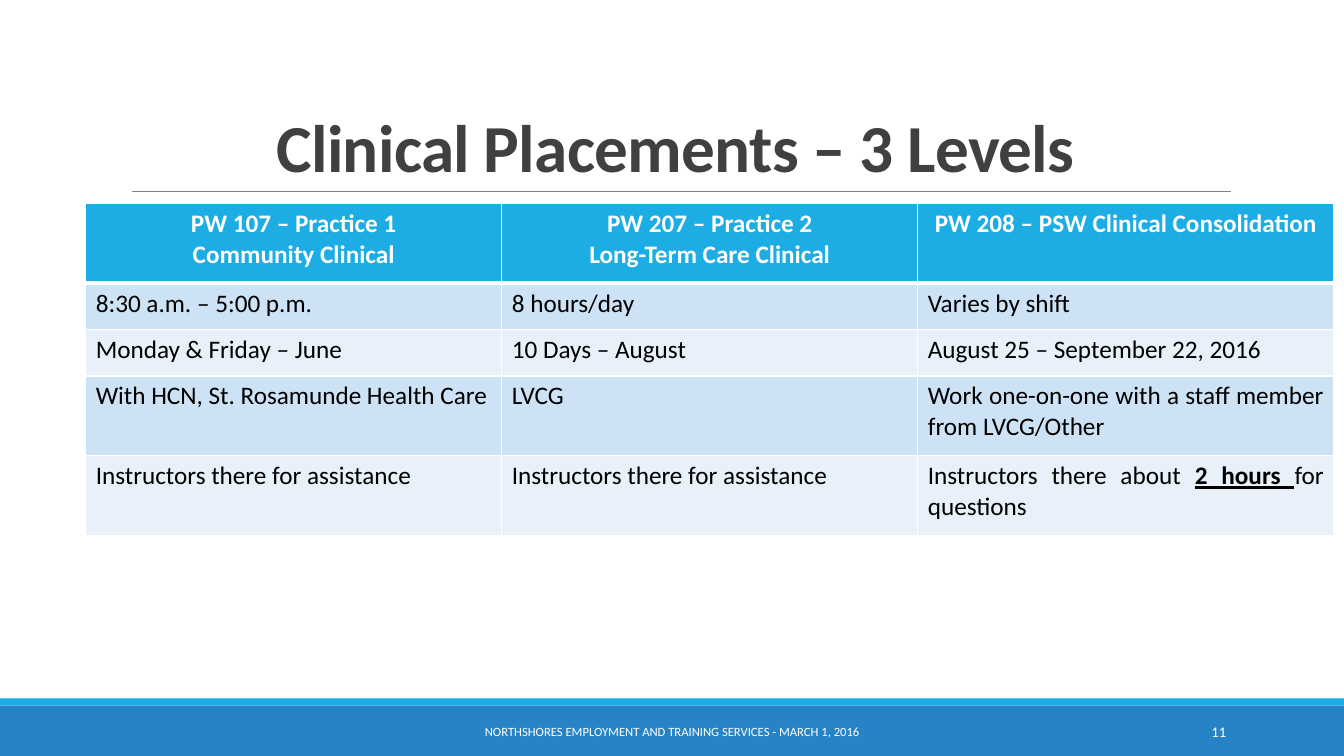
from lxml import etree
from pptx import Presentation
from pptx.dml.color import RGBColor
from pptx.enum.shapes import MSO_CONNECTOR, MSO_SHAPE
from pptx.enum.text import MSO_ANCHOR, PP_ALIGN
from pptx.oxml.ns import qn
from pptx.util import Inches, Pt

WHITE = RGBColor(0xFF, 0xFF, 0xFF)
BLACK = RGBColor(0, 0, 0)
DARK_GREY = RGBColor(0x40, 0x40, 0x40)
MID_GREY = RGBColor(0x80, 0x80, 0x80)
CYAN = RGBColor(0x1C, 0xAD, 0xE4)
BLUE = RGBColor(0x26, 0x83, 0xC6)
BAND_DARK = RGBColor(0xCD, 0xE3, 0xF5)
BAND_LIGHT = RGBColor(0xE8, 0xF1, 0xFA)
FONT = "Calibri"

TITLE = "Clinical Placements – 3 Levels"
FOOTER = "NORTHSHORES EMPLOYMENT AND TRAINING SERVICES - MARCH 1, 2016"
SLIDE_NUMBER = "11"
# Each cell is a list of paragraphs
HEADERS = [
    ["PW 107 – Practice 1", "Community Clinical"],
    ["PW 207 – Practice 2", "Long-Term Care Clinical"],
    ["PW 208 – PSW Clinical Consolidation"],
]
ROWS = [
    ["8:30 a.m. – 5:00 p.m.", "8 hours/day", "Varies by shift"],
    ["Monday & Friday – June", "10 Days – August", "August 25 – September 22, 2016"],
    ["With HCN, St. Rosamunde Health Care", "LVCG",
     "Work one-on-one with a staff member from LVCG/Other"],
    ["Instructors there for assistance", "Instructors there for assistance",
     "Instructors there about 2 hours for questions"],
]
EMPHASIS = "2 hours "
ROW_HEIGHTS = [0.79, 0.46, 0.46, 0.79, 0.79]
TABLE_LEFT, TABLE_TOP, TABLE_WIDTH = 0.85, 2.02, 12.38


def add_run(paragraph, text, size, color, bold=False, underline=False):
    run = paragraph.add_run()
    run.text = text
    font = run.font
    font.name, font.size, font.bold = FONT, Pt(size), bold
    font.underline = underline
    font.color.rgb = color
    return run


def add_bar(slide, top, height, color):
    bar = slide.shapes.add_shape(
        MSO_SHAPE.RECTANGLE, 0, Inches(top), Inches(13.33), Inches(height))
    bar.shadow.inherit = False
    bar.fill.solid()
    bar.fill.fore_color.rgb = color
    bar.line.fill.background()


def add_label(slide, left, width, text, size, alignment):
    box = slide.shapes.add_textbox(Inches(left), Inches(7.06), Inches(width), Inches(0.4))
    frame = box.text_frame
    frame.word_wrap = True
    frame.vertical_anchor = MSO_ANCHOR.MIDDLE
    paragraph = frame.paragraphs[0]
    paragraph.alignment = alignment
    add_run(paragraph, text, size, WHITE)


def set_borders(cell, top, bottom):
    """Give the cell white borders; top and bottom are widths in points."""
    properties = cell._tc.get_or_add_tcPr()
    widths = {"a:lnL": 1, "a:lnR": 1, "a:lnT": top, "a:lnB": bottom}
    for index, (tag, width) in enumerate(widths.items()):
        line = etree.Element(qn(tag), w=str(Pt(width)))
        fill = etree.SubElement(line, qn("a:solidFill"))
        etree.SubElement(fill, qn("a:srgbClr"), val=str(WHITE))
        properties.insert(index, line)


def fill_cell(cell, paragraphs, row):
    is_header = row == 0
    color = WHITE if is_header else BLACK
    cell.fill.solid()
    cell.fill.fore_color.rgb = CYAN if is_header else (BAND_DARK if row % 2 else BAND_LIGHT)
    set_borders(cell, 3 if row == 1 else 1, 3 if is_header else 1)
    frame = cell.text_frame
    for index, text in enumerate(paragraphs):
        paragraph = frame.add_paragraph() if index else frame.paragraphs[0]
        paragraph.alignment = PP_ALIGN.CENTER if is_header else PP_ALIGN.JUSTIFY
        before, emphasis, after = text.partition(EMPHASIS)
        add_run(paragraph, before, 18, color, is_header)
        if emphasis:
            add_run(paragraph, emphasis, 18, color, True, True)
            add_run(paragraph, after, 18, color)


def add_placement_table(slide):
    cells = [HEADERS] + [[[text] for text in row] for row in ROWS]
    table = slide.shapes.add_table(
        len(cells), len(HEADERS), Inches(TABLE_LEFT), Inches(TABLE_TOP),
        Inches(TABLE_WIDTH), Inches(sum(ROW_HEIGHTS))).table
    for column in table.columns:
        column.width = Inches(TABLE_WIDTH / len(HEADERS))
    for row, height in enumerate(ROW_HEIGHTS):
        table.rows[row].height = Inches(height)
        for column, paragraphs in enumerate(cells[row]):
            fill_cell(table.cell(row, column), paragraphs, row)


def add_title(slide):
    title = slide.shapes.title
    title.left, title.top = Inches(1.2), Inches(0.31)
    title.width, title.height = Inches(11), Inches(1.59)
    title.text_frame.vertical_anchor = MSO_ANCHOR.BOTTOM
    paragraph = title.text_frame.paragraphs[0]
    paragraph.alignment = PP_ALIGN.CENTER
    paragraph.line_spacing = 0.85
    run = add_run(paragraph, TITLE, 48, DARK_GREY, True)
    run.font._element.set("spc", "-50")

    rule = slide.shapes.add_connector(
        MSO_CONNECTOR.STRAIGHT, Inches(1.31), Inches(1.9), Inches(12.21), Inches(1.9))
    rule.line.color.rgb = MID_GREY
    rule.line.width = Pt(0.5)
    etree.SubElement(rule._element.spPr, qn("a:effectLst"))


def main():
    presentation = Presentation()
    presentation.slide_width = Inches(13.33)
    presentation.slide_height = Inches(7.5)
    slide = presentation.slides.add_slide(presentation.slide_layouts[5])
    add_bar(slide, 7, 0.5, BLUE)
    add_bar(slide, 6.93, 0.07, CYAN)
    add_title(slide)
    add_placement_table(slide)
    add_label(slide, 10.83, 1.43, SLIDE_NUMBER, 10.5, PP_ALIGN.RIGHT)
    add_label(slide, 4.03, 5.27, FOOTER, 9, PP_ALIGN.CENTER)
    presentation.save("out.pptx")


if __name__ == "__main__":
    main()
